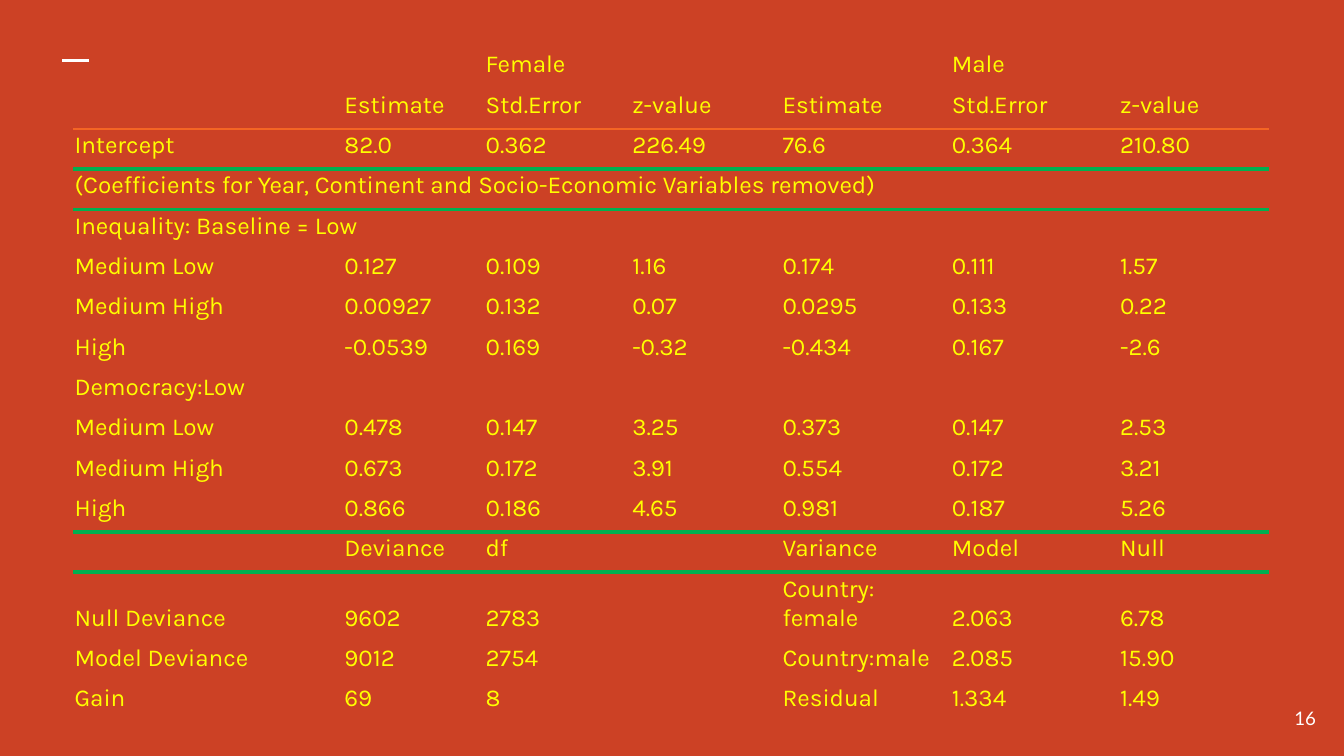
"""Build a slide with a table of model coefficients by sex."""
from lxml import etree
from pptx import Presentation
from pptx.dml.color import RGBColor
from pptx.enum.shapes import MSO_CONNECTOR
from pptx.enum.text import MSO_ANCHOR, PP_ALIGN
from pptx.oxml.ns import qn
from pptx.util import Cm, Pt

LINE = MSO_CONNECTOR.STRAIGHT
LOW, MID = MSO_ANCHOR.BOTTOM, MSO_ANCHOR.MIDDLE
RIGHT = PP_ALIGN.RIGHT
PLAIN = "{2D5ABB26-0587-4C30-8999-92F81FD0307C}"

THEME = {
    "back": "CC4125", "white": "FFFFFF", "text": "FFFF00",
    "thin": "F46524", "thick": "00B050",
    "body": ("Karla", 13), "page": ("Lato", 10),
}
CELL = {
    "vertical_anchor": LOW, "margin_left": Cm(0.03), "margin_right": Cm(0.03),
    "margin_top": Cm(0.03), "margin_bottom": Cm(0.18),
}
BOX = {"word_wrap": True, "vertical_anchor": MID} | {
    f"margin_{side}": Cm(0.25) for side in ("left", "right", "top", "bottom")
}
WIDTHS = [5.1, 2.67, 2.77, 2.84, 3.2, 3.18, 2.84]
HEIGHT, TALL = 0.74, 1.28
ROWS = [
    ["", "", "Female", "", "", "Male", ""],
    ["", "Estimate", "Std.Error", "z-value", "Estimate", "Std.Error", "z-value"],
    ["Intercept", "82.0", "0.362", "226.49", "76.6", "0.364", "210.80"],
    ["(Coefficients for Year, Continent and Socio-Economic Variables removed)"],
    ["Inequality: Baseline = Low"],
    ["Medium Low", "0.127", "0.109", "1.16", "0.174", "0.111", "1.57"],
    ["Medium High", "0.00927", "0.132", "0.07", "0.0295", "0.133", "0.22"],
    ["High", "-0.0539", "0.169", "-0.32", "-0.434", "0.167", "-2.6"],
    ["Democracy:Low"],
    ["Medium Low", "0.478", "0.147", "3.25", "0.373", "0.147", "2.53"],
    ["Medium High", "0.673", "0.172", "3.91", "0.554", "0.172", "3.21"],
    ["High", "0.866", "0.186", "4.65", "0.981", "0.187", "5.26"],
    ["", "Deviance", "df", "", "Variance", "Model", "Null"],
    ["Null Deviance", "9602", "2783", "", "Country: female", "2.063", "6.78"],
    ["Model Deviance", "9012", "2754", "", "Country:male", "2.085", "15.90"],
    ["Gain", "69", "8", "", "Residual", "1.334", "1.49"],
]
SPANS = {3: 7, 4: 2}
RULES = {1: ("thin", 1), 2: ("thick", 2.25), 11: ("thick", 2.25)}


def write(par, text, style, tint):
    name, size = THEME[style]
    if not text:
        etree.SubElement(par._p, qn("a:endParaRPr"), sz=str(size * 100))
        return
    run = par.add_run()
    run.text = text
    run.font.name, run.font.size = name, Pt(size)
    run.font.color.rgb = RGBColor.from_string(THEME[tint])


def border(cell, side, tint, width):
    props = cell._tc.get_or_add_tcPr()
    line = etree.SubElement(props, qn(f"a:ln{side}"), w=str(Pt(width)))
    fill = etree.SubElement(line, qn("a:solidFill"))
    etree.SubElement(fill, qn("a:srgbClr"), val=THEME[tint])


deck = Presentation()
deck.slide_width, deck.slide_height = Cm(25.4), Cm(14.29)
slide = deck.slides.add_slide(deck.slide_layouts[6])
slide.background.fill.solid()
slide.background.fill.fore_color.rgb = RGBColor.from_string(THEME["back"])

dash = slide.shapes.add_connector(LINE, Cm(1.18), Cm(1.15), Cm(1.69), Cm(1.15))
dash.line.color.rgb = RGBColor.from_string(THEME["white"])
dash.line.width = Pt(1.5)
etree.SubElement(dash.element.spPr, qn("a:effectLst"))

frame = slide.shapes.add_textbox(Cm(23.6), Cm(13.03), Cm(1.52), Cm(1.09)).text_frame
for key, value in BOX.items():
    setattr(frame, key, value)
frame.paragraphs[0].alignment = RIGHT
write(frame.paragraphs[0], "16", "page", "white")

grid = slide.shapes.add_table(
    len(ROWS), len(WIDTHS), Cm(1.38), Cm(0.91),
    Cm(sum(WIDTHS)), Cm(HEIGHT * (len(ROWS) - 1) + TALL),
)
table = grid.table
table.first_row = table.horz_banding = False
next(grid.element.iter(qn("a:tableStyleId"))).text = PLAIN
for col, width in zip(table.columns, WIDTHS):
    col.width = Cm(width)
for r, row in enumerate(ROWS):
    table.rows[r].height = Cm(TALL if "Country: female" in row else HEIGHT)
    if r in SPANS:
        table.cell(r, 0).merge(table.cell(r, SPANS[r] - 1))
    for c in range(len(WIDTHS)):
        cell = table.cell(r, c)
        for key, value in CELL.items():
            setattr(cell, key, value)
        for side, rule in (("T", r - 1), ("B", r)):
            if rule in RULES:
                border(cell, side, *RULES[rule])
        cell.fill.background()
        text = row[c] if c < len(row) else ""
        write(cell.text_frame.paragraphs[0], text, "body", "text")

deck.save("out.pptx")
